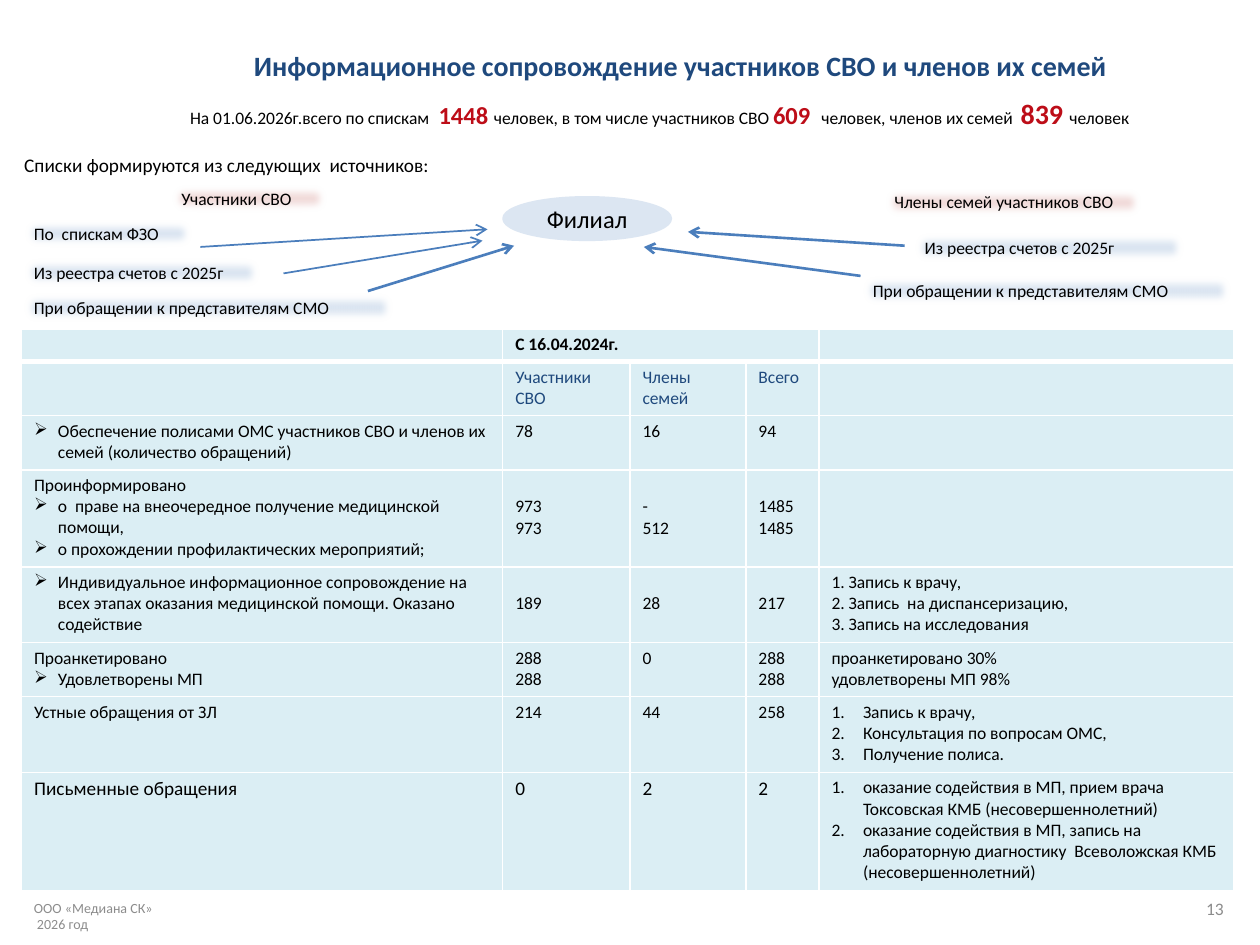
import lxml.etree
import pptx
import pptx.dml.color
import pptx.enum.shapes
import pptx.enum.text
import pptx.oxml.ns
import pptx.util

ALIGN = pptx.enum.text.PP_ALIGN
ANCHOR = pptx.enum.text.MSO_ANCHOR
SHAPE = pptx.enum.shapes.MSO_SHAPE
NAVY, BLACK, RED, GREY = "1F497D", "000000", "BD0D18", "8C8C8C"
WHITE, BLUE, PALE_BLUE, PALE_RED, TEAL = "FFFFFF", "4B7EBC", "DCE6F2", "F2DCDB", "DBEEF4"
LINE_HEIGHT, CELL_PADDING = 1.7, 0.45
ARROW_BULLET, NUMBER = "➢", "1."


def color(value):
    return pptx.dml.color.RGBColor.from_string(value)


def grid(*steps):
    """Turn steps of the 100 by 75 slide grid into lengths."""
    return [pptx.util.Inches(step / 10) for step in steps]


def add_xml(parent, tag, **attributes):
    return lxml.etree.SubElement(parent, pptx.oxml.ns.qn(tag), attributes)


class Slide:
    font = "Calibri"

    def __init__(self, deck):
        self.page = deck.slides.add_slide(deck.slide_layouts[5])

    def add_span(self, para, text, size=10, ink=BLACK, bold=False):
        span = para.add_run()
        span.text = text
        span.font.name = self.font
        span.font.size = pptx.util.Pt(size)
        span.font.bold = bold
        span.font.color.rgb = color(ink)

    def add_lines(self, frame, lines, align=ALIGN.LEFT, anchor=ANCHOR.TOP):
        """Add each line from a list of (text, size, ink, bold) spans."""
        frame.word_wrap = True
        frame.vertical_anchor = anchor
        for index, spans in enumerate(lines):
            para = frame.add_paragraph() if index else frame.paragraphs[0]
            para.alignment = align
            for span in spans:
                self.add_span(para, *span)

    def title(self, text, place):
        box = self.page.shapes.title
        box.left, box.top, box.width, box.height = grid(*place)
        self.add_lines(box.text_frame, [[(text, 16, NAVY, True)]], ALIGN.CENTER, ANCHOR.MIDDLE)

    def text(self, lines, place, align=ALIGN.LEFT, anchor=ANCHOR.TOP):
        box = self.page.shapes.add_textbox(*grid(*place))
        self.add_lines(box.text_frame, lines, align, anchor)

    def shape(self, kind, place, fill):
        box = self.page.shapes.add_shape(kind, *grid(*place))
        box.shadow.inherit = False
        box.fill.solid()
        box.fill.fore_color.rgb = color(fill)
        box.line.fill.background()
        return box

    def label(self, text, left, top, width, fill):
        """Add a label on a colour band with soft edges."""
        box = self.shape(SHAPE.RECTANGLE, (left, top, width, 2.7), fill)
        effects = box._element.spPr.find(pptx.oxml.ns.qn("a:effectLst"))
        add_xml(effects, "a:softEdge", rad=str(pptx.util.Pt(5)))
        self.add_lines(box.text_frame, [[(text,)]])

    def ellipse(self, text, place, fill):
        box = self.shape(SHAPE.OVAL, place, fill)
        box.line.color.rgb = color(fill)
        box.line.width = pptx.util.Pt(2)
        self.add_lines(box.text_frame, [[(text, 14)]], ALIGN.CENTER, ANCHOR.MIDDLE)

    def arrow(self, ends, width):
        straight = pptx.enum.shapes.MSO_CONNECTOR.STRAIGHT
        line = self.page.shapes.add_connector(straight, *grid(*ends))
        line.line.color.rgb = color(BLUE)
        line.line.width = pptx.util.Pt(width)
        properties = line._element.spPr
        add_xml(properties.find(pptx.oxml.ns.qn("a:ln")), "a:tailEnd", type="arrow")
        add_xml(properties, "a:effectLst")

    def table(self, left, top, columns, rows):
        """Each row is (line count, cells); its height follows the line count."""
        heights = [count * LINE_HEIGHT + 2 * CELL_PADDING for count, cells in rows]
        place = grid(left, top, sum(columns), sum(heights))
        table = self.page.shapes.add_table(len(rows), len(columns), *place).table
        for column, width in zip(table.columns, grid(*columns)):
            column.width = width
        for row, height in zip(table.rows, grid(*heights)):
            row.height = height
        for row_index, (count, cells) in enumerate(rows):
            for column_index, content in enumerate(cells):
                self.cell(table.cell(row_index, column_index), row_index == 0, **content)
        return table

    def cell(self, cell, heading, lines=(), size=10, ink=BLACK, bold=False, skip=0):
        """Fill a cell; skip lowers its text by that many lines."""
        cell.margin_top, cell.margin_bottom = grid(CELL_PADDING - 0.05 + skip * LINE_HEIGHT, 0.4)
        for index, line in enumerate(lines):
            mark, text = line if isinstance(line, tuple) else (None, line)
            para = cell.text_frame.add_paragraph() if index else cell.text_frame.paragraphs[0]
            if mark:
                self.bullet(para, mark)
            self.add_span(para, text, size, ink, bold)
        if not lines:
            add_xml(cell.text_frame.paragraphs[0]._p, "a:endParaRPr", sz=str(size * 100))
        properties = cell._tc.get_or_add_tcPr()
        for side in ("L", "R", "T", "B"):
            width = 3 if heading and side == "B" else 1
            border = add_xml(properties, "a:ln" + side, w=str(pptx.util.Pt(width)))
            add_xml(add_xml(border, "a:solidFill"), "a:srgbClr", val=WHITE)
        cell.fill.solid()
        cell.fill.fore_color.rgb = color(TEAL)

    def bullet(self, para, mark):
        indent = grid(1.9 if mark == ARROW_BULLET else 2.5)[0]
        properties = para._p.get_or_add_pPr()
        properties.set("marL", str(indent))
        properties.set("indent", str(-indent))
        if mark == NUMBER:
            add_xml(properties, "a:buAutoNum", type="arabicPeriod")
        else:
            add_xml(properties, "a:buChar", char=mark)


def marked(mark, *texts):
    return [(mark, text) for text in texts]


def values(*columns, **style):
    return [dict(lines=column.split(), **style) for column in columns]


def main():
    deck = pptx.Presentation()
    deck.slide_width, deck.slide_height = grid(100, 75)
    slide = Slide(deck)

    slide.title("Информационное сопровождение участников СВО и членов их семей", (12, 3.3, 84, 3.7))
    slide.text([[("Списки формируются из следующих  источников:", 11)]],
               (0, 11.7, 36, 2.9), ALIGN.CENTER)
    slide.text([[("На 01.06.2026г.всего по спискам ",), (" 1448 ", 14, RED, True),
                 ("человек, в том числе участников СВО ",), ("609  ", 14, RED, True),
                 ("человек, членов их семей  ",), ("839 ", 16, RED, True), ("человек",)]],
               (14.1, 7.2, 85.9, 3.7))

    registry, request = "Из реестра счетов с 2025г", "При обращении к представителям СМО"
    for label in [
        ("Участники СВО", 13.4, 14.4, 12.8, PALE_RED),
        ("По  спискам ФЗО", 1.7, 17.2, 13.8, PALE_BLUE),
        (registry, 1.7, 20.3, 19.1, PALE_BLUE),
        (request, 1.7, 23.1, 29.7, PALE_BLUE),
        ("Члены семей участников СВО", 70, 14.7, 20.8, PALE_RED),
        (registry, 72.4, 18.3, 21.8, PALE_BLUE),
        (request, 68.3, 21.7, 29.6, PALE_BLUE),
    ]:
        slide.label(*label)
    for ends, width in [
        ((15.9, 19.6, 38.7, 18.2), 1),
        ((22.5, 21.7, 38.3, 19.1), 1),
        ((29.2, 23.1, 40.8, 19.5), 1.5),
        ((71.8, 19.5, 54.6, 18.4), 1.5),
        ((68.3, 21.9, 51.1, 19.6), 1.5),
    ]:
        slide.arrow(ends, width)

    empty = {}
    rows = [
        (1, [empty, dict(lines=["С 16.04.2024г."], bold=True), empty, empty, empty]),
        (2, [empty, *[dict(lines=[text], ink=NAVY)
                      for text in ("Участники СВО", "Члены семей", "Всего")], empty]),
        (2, [dict(lines=marked(ARROW_BULLET, "Обеспечение полисами ОМС участников СВО и членов "
                               "их семей (количество обращений)")),
             *values("78", "16", "94"), empty]),
        (4, [dict(lines=["Проинформировано", *marked(
                ARROW_BULLET, "о  праве на внеочередное получение медицинской помощи,",
                "о прохождении профилактических мероприятий;")]),
             *values("973 973", "- 512", "1485 1485", skip=1), empty]),
        (3, [dict(lines=marked(ARROW_BULLET, "Индивидуальное информационное сопровождение на всех "
                               "этапах оказания медицинской помощи. Оказано содействие")),
             *values("189", "28", "217", skip=1),
             dict(lines=["1. Запись к врачу,", "2. Запись  на диспансеризацию,",
                         "3. Запись на исследования"])]),
        (2, [dict(lines=["Проанкетировано", (ARROW_BULLET, "Удовлетворены МП")]),
             *values("288 288", "0", "288 288"),
             dict(lines=["проанкетировано 30%", "удовлетворены МП 98%"])]),
        (3, [dict(lines=["Устные обращения от ЗЛ"]), *values("214", "44", "258"),
             dict(lines=marked(NUMBER, "Запись к врачу,", "Консультация по вопросам ОМС,",
                               "Получение полиса."))]),
        (5, [dict(lines=["Письменные обращения"], size=11), *values("0", "2", "2", size=11),
             dict(lines=marked(
                 NUMBER, "оказание содействия в МП, прием врача  Токсовская КМБ (несовершеннолетний)",
                 "оказание содействия в МП, запись на лабораторную диагностику  "
                 "Всеволожская КМБ (несовершеннолетний)"))]),
    ]
    table = slide.table(1.7, 26.1, (38.2, 10.1, 9.2, 5.8, 32.9), rows)
    table.cell(0, 1).merge(table.cell(0, 3))

    slide.ellipse("Филиал", (40, 15.7, 13.2, 3.3), PALE_BLUE)
    slide.text([[("ООО «Медиана СК»", 8, GREY)], [(" 2026 год", 8, GREY)]],
               (1.7, 71.2, 20.8, 3), anchor=ANCHOR.MIDDLE)
    slide.text([[("13", 10, GREY)]], (75.2, 70, 22.9, 4.2), ALIGN.RIGHT, ANCHOR.MIDDLE)
    deck.save("out.pptx")


if __name__ == "__main__":
    main()
